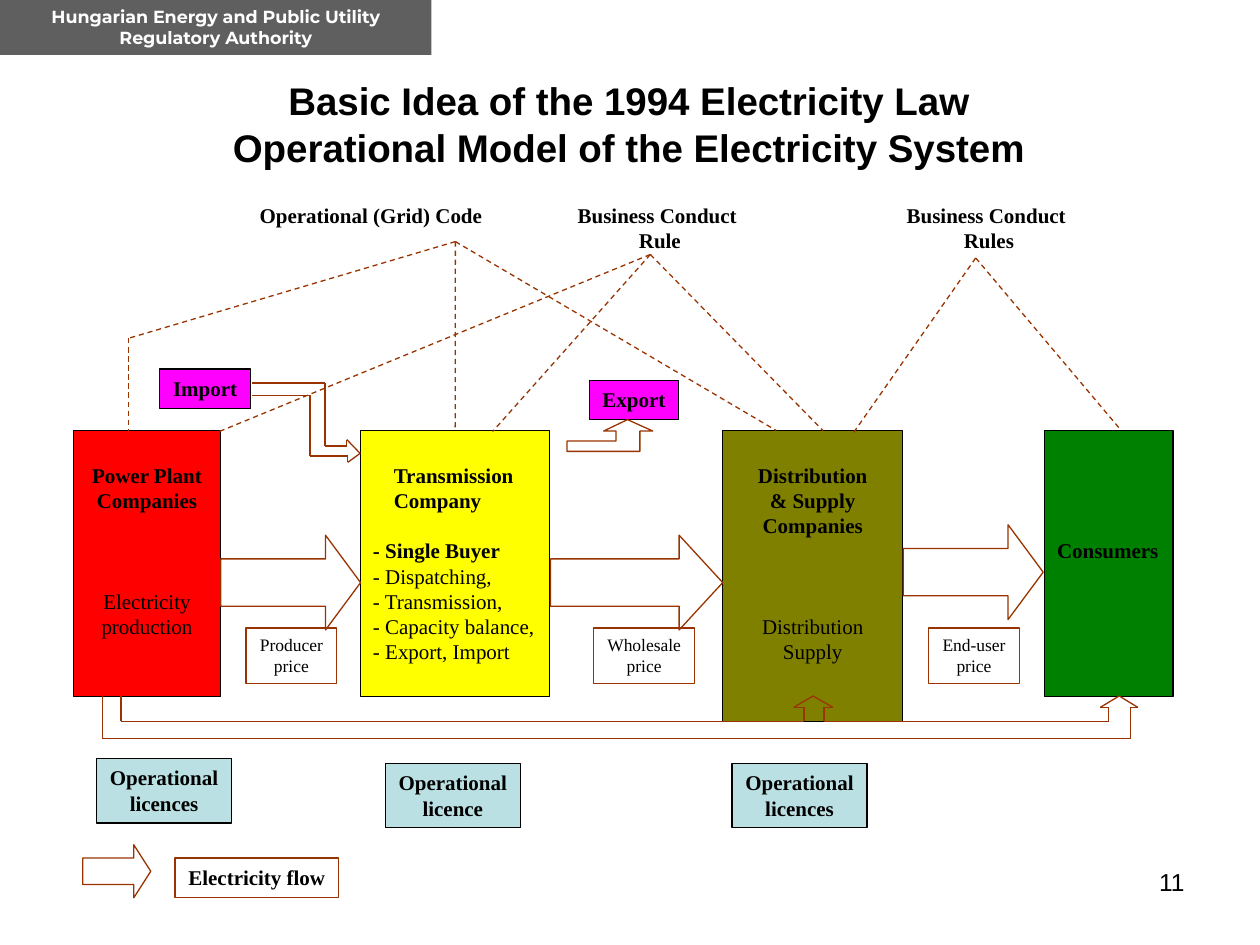
import pptx
import pptx.dml.color
import pptx.enum.dml
import pptx.enum.shapes
import pptx.enum.text
import pptx.oxml.ns
import pptx.util
import itertools
import lxml.etree

Cm = pptx.util.Cm
Pt = pptx.util.Pt
SHAPES = pptx.enum.shapes.MSO_SHAPE
ALIGN = pptx.enum.text.PP_ALIGN
BROWN = "993300"
LINE_HEIGHT = 14.4


def color(value):
    """Turn a hex string into a colour."""
    return pptx.dml.color.RGBColor.from_string(value)


def write(shape, text, size=12, bold=True, font="Times New Roman", ink="000000",
          align=ALIGN.CENTER, wrap=False, top=0.13, gaps=None, plain_from=None,
          indent=0, indented=()):
    """Write one paragraph per line; gaps maps a line to the lines left free above it."""
    frame = shape.text_frame
    frame.auto_size = pptx.enum.text.MSO_AUTO_SIZE.NONE
    frame.word_wrap = wrap
    frame.vertical_anchor = pptx.enum.text.MSO_ANCHOR.TOP
    frame.margin_left = frame.margin_right = Cm(0.25)
    frame.margin_top, frame.margin_bottom = Cm(top), Cm(0.13)
    for index, line in enumerate(text.split("\n")):
        para = frame.add_paragraph() if index else frame.paragraphs[0]
        para.alignment = align
        if index in indented:
            para._p.get_or_add_pPr().set("marL", str(Cm(indent)))
        if gaps and index in gaps:
            para.space_before = Pt(gaps[index] * LINE_HEIGHT)
        span = para.add_run()
        span.text = line
        span.font.name, span.font.size = font, Pt(size)
        span.font.bold = bold and (plain_from is None or index < plain_from)
        span.font.color.rgb = color(ink)


def dress(shape, fill=None, line=None):
    """Give a shape its fill and line, and no shadow."""
    shape.shadow.inherit = False
    if fill:
        shape.fill.solid()
        shape.fill.fore_color.rgb = color(fill)
    else:
        shape.fill.background()
    if line:
        shape.line.color.rgb = color(line)
        shape.line.width = Pt(0.75)
    else:
        shape.line.fill.background()


def add_block(page, box, text, fill=None, line="000000", **style):
    """Add a rectangle with text."""
    block = page.shapes.add_shape(SHAPES.RECTANGLE, *map(Cm, box))
    dress(block, fill, line)
    write(block, text, **style)
    return block


def add_label(page, box, text, **style):
    """Add a text box."""
    write(page.shapes.add_textbox(*map(Cm, box)), text, **style)


def add_flow_arrow(page, box, head):
    """Add a hollow arrow pointing right."""
    arrow = page.shapes.add_shape(SHAPES.RIGHT_ARROW, *map(Cm, box))
    arrow.adjustments[0], arrow.adjustments[1] = 0.5, head
    dress(arrow, line=BROWN)


def add_outline(page, box, points):
    """Draw a closed hollow outline through points measured from the corner of the box."""
    places = [(Cm(box[0] + x), Cm(box[1] + y)) for x, y in points]
    builder = page.shapes.build_freeform(*places[0])
    builder.add_line_segments(places[1:], close=True)
    dress(builder.convert_to_shape(), line=BROWN)


def add_line(page, box, start, end, dashed=False, target=None):
    """Draw a line inside the box, joined to the top of a target if given."""
    places = [Cm(box[axis] + point[axis]) for point in (start, end) for axis in (0, 1)]
    link = page.shapes.add_connector(pptx.enum.shapes.MSO_CONNECTOR.STRAIGHT, *places)
    link.line.color.rgb = color(BROWN)
    link.line.width = Pt(0.75)
    if dashed:
        link.line.dash_style = pptx.enum.dml.MSO_LINE.DASH
    lxml.etree.SubElement(link._element.spPr, pptx.oxml.ns.qn("a:effectLst"))
    if target is not None:
        link.end_connect(target, 0)


def add_route(page, box, points):
    """Draw a chain of lines through points measured from the corner of the box."""
    for start, end in itertools.pairwise(points):
        add_line(page, box, start, end)


def add_heading(page, box):
    """Place the slide title."""
    title = page.shapes.title
    title.left, title.top, title.width, title.height = map(Cm, box)
    write(title, "Basic Idea of the 1994 Electricity Law\n"
          "Operational Model of the Electricity System", size=22, font="Arial", wrap=True)


def add_rules(page, box):
    """Place the names of the codes and rules in a row."""
    left, top, _, height = box
    for offset, width, text in ((0, 5, "Operational (Grid) Code"),
                                (6.42, 3.81, "Business Conduct \nRule"),
                                (13.05, 3.71, "Business Conduct\n Rules")):
        add_label(page, (left + offset, top, width, height), text)


def add_companies(page, box):
    """Place the four market players and return the transmission company."""
    left, top, _, height = box
    add_block(page, (left, top, 2.97, height),
              "Power Plant\nCompanies\nElectricity\nproduction",
              fill="FF0000", top=0.64, gaps={2: 3}, plain_from=2)
    transmission = add_block(
        page, (left + 5.79, top, 3.81, height),
        "Transmission\nCompany\n- Single Buyer\n- Dispatching,\n- Transmission,\n"
        "- Capacity balance,\n- Export, Import",
        fill="FFFF00", top=0.64, gaps={2: 1}, plain_from=3, align=ALIGN.LEFT,
        indent=0.42, indented=(0, 1))
    add_block(page, (left + 13.09, top, 3.63, height + 0.51),
              "Distribution\n& Supply\nCompanies\nDistribution\nSupply",
              fill="808000", top=0.64, gaps={3: 3}, plain_from=3)
    add_block(page, (left + 19.58, top, 2.59, height), "Consumers",
              fill="008000", top=2.16, align=ALIGN.LEFT)
    return transmission


def add_prices(page, box):
    """Place the price labels under the flow arrows."""
    left, top, _, height = box
    for offset, width, name in ((0, 1.83, "Producer"), (7.01, 2.03, "Wholesale"),
                                (13.76, 1.83, "End-user")):
        add_block(page, (left + offset, top, width, height), name + "\nprice",
                  line=BROWN, size=10, bold=False)


def add_trade(page, box):
    """Place import and export with their bent arrows."""
    left, top = box[:2]
    add_block(page, (left, top, 1.83, 0.79), "Import", fill="FF00FF")
    add_block(page, (left + 8.66, top + 0.23, 1.8, 0.79), "Export", fill="FF00FF")
    add_outline(page, (left + 8.21, top + 1.02),
                [(1.22, 0), (0.74, 0.23), (0.99, 0.23), (0.99, 0.43), (0, 0.43),
                 (0, 0.64), (1.47, 0.64), (1.47, 0.23), (1.73, 0.23)])
    add_route(page, (left + 1.86, top + 0.28),
              [(0, 0), (1.47, 0), (1.47, 1.27), (1.91, 1.27), (1.91, 1.14), (2.18, 1.42),
               (1.93, 1.6), (1.93, 1.47), (1.17, 1.47), (1.17, 0.25), (0, 0.25)])


def add_licences(page, box):
    """Place the licence boxes."""
    left, top, _, height = box
    for x, y, word in ((0, 0, "licences"), (5.82, 0.1, "licence"), (12.81, 0.1, "licences")):
        add_block(page, (left + x, top + y, 2.72, height), "Operational\n" + word,
                  fill="BBE0E3")


def add_flows(page, box):
    """Place the flow arrows between the companies."""
    left, top, _, height = box
    for x, y, width, head in ((0, 0.21, 2.82, 0.37), (6.65, 0.21, 3.47, 0.46),
                              (13.76, 0, 2.82, 0.37)):
        add_flow_arrow(page, (left + x, top + y, width, height), head)


def add_bypass(page, box):
    """Draw the direct route from power plants to suppliers and consumers."""
    add_route(page, box,
              [(0, 0), (0, 0.86), (20.73, 0.86), (20.73, 0.23), (20.88, 0.23), (20.5, 0),
               (20.12, 0.23), (20.29, 0.23), (20.29, 0.51), (14.55, 0.51), (14.55, 0.23),
               (14.73, 0.23), (14.33, 0), (13.94, 0.23), (14.15, 0.23), (14.15, 0.51),
               (0.38, 0.51), (0.38, 0)])


def add_rule_links(page, box, transmission):
    """Link each rule to the companies it binds."""
    fans = {(6.59, 0): [(0, 1.95), (13.06, 3.81)],
            (10.52, 0.26): [(1.83, 3.83), (7.34, 3.83), (14, 3.81)],
            (17.08, 0.33): [(14.61, 3.86), (19.99, 3.78)]}
    for apex, ends in fans.items():
        for end in ends:
            add_line(page, box, apex, end, dashed=True)
    add_line(page, box, (0, 1.95), (0, 3.81), dashed=True)
    add_line(page, box, (6.59, 0), (6.59, 3.81), dashed=True, target=transmission)


def add_legend(page, box):
    """Explain the hollow arrow."""
    left, top = box[:2]
    add_flow_arrow(page, (left, top, 1.37, 1.07), 0.32)
    add_block(page, (left + 1.86, top + 0.27, 3.3, 0.79), "Electricity flow", line=BROWN)


def main():
    """Build and save the deck."""
    deck = pptx.Presentation()
    deck.slide_width, deck.slide_height = Cm(25.4), Cm(19.05)
    page = deck.slides.add_slide(deck.slide_layouts[5])
    add_rules(page, (4.98, 3.95, 16.76, 1.27))
    transmission = add_companies(page, (1.48, 8.68, 22.17, 5.36))
    add_heading(page, (1.68, 1.43, 22, 2.13))
    add_prices(page, (4.96, 12.66, 15.59, 1.12))
    add_trade(page, (3.22, 7.44, 10.46, 1.88))
    add_licences(page, (1.95, 15.29, 15.53, 1.3))
    add_flows(page, (4.45, 10.58, 16.58, 1.91))
    add_legend(page, (1.67, 17.03, 5.16, 1.07))
    add_rule_links(page, (2.59, 4.87, 19.99, 3.81), transmission)
    add_bypass(page, (2.06, 14.03, 20.88, 0.86))
    add_label(page, (18.21, 17.35, 5.92, 1.32), "11", size=14, bold=False, font="Arial",
              align=ALIGN.RIGHT, wrap=True)
    add_block(page, (0, 0, 8.7, 1.11),
              "Hungarian Energy and Public Utility Regulatory Authority", fill="5F5F5F",
              line=None, size=10, font="Montserrat", ink="FFFFFF", wrap=True)
    deck.save("out.pptx")


if __name__ == "__main__":
    main()
